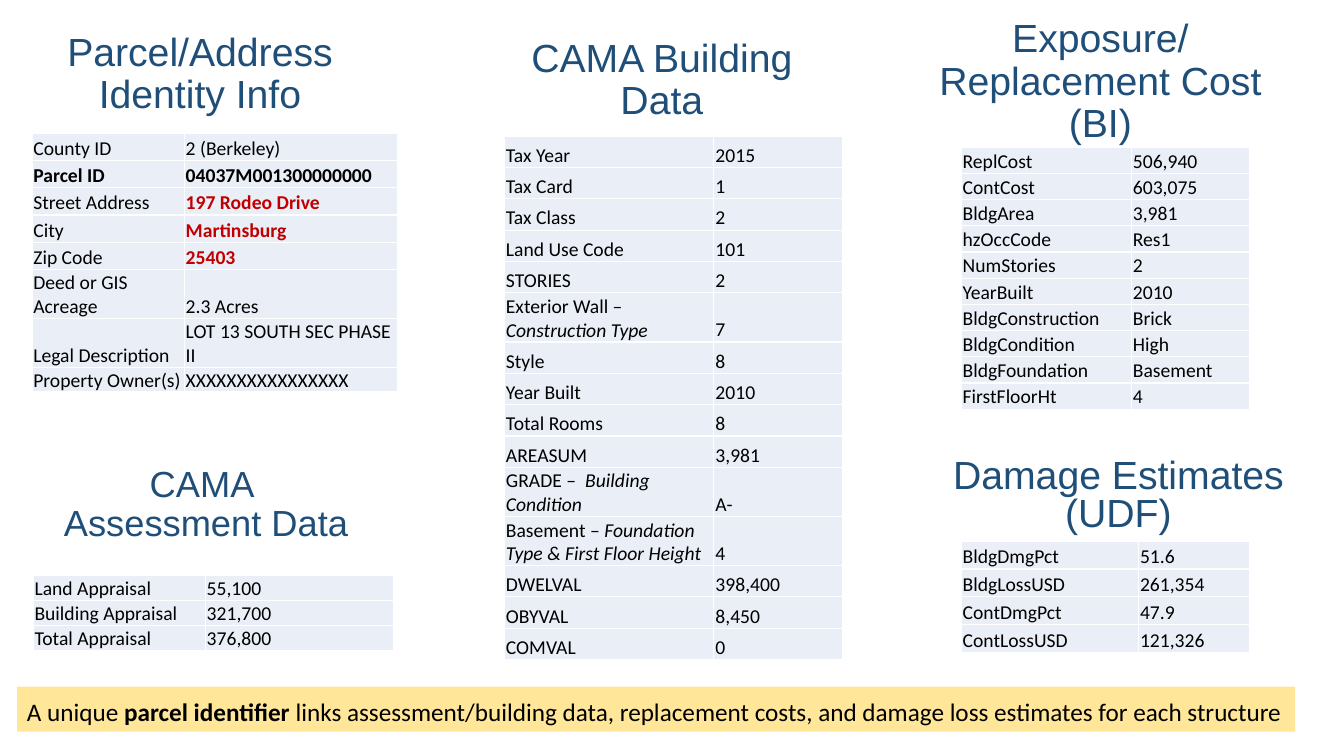
from lxml.etree import SubElement
from pptx import Presentation
from pptx.dml.color import RGBColor
from pptx.enum.shapes import MSO_SHAPE
from pptx.enum.text import MSO_ANCHOR, PP_ALIGN
from pptx.oxml.ns import qn
from pptx.util import Cm, Pt

COLORS = {
    "heading": "1F4E79",
    "text": "000000",
    "address": "C00000",
    "cell": "EAEFF7",
    "border": "FFFFFF",
    "banner": "FFE699",
}
BODY = {"name": "Calibri", "size": Pt(14), "color": "text"}
BOLD = {"bold": True}
ITALIC = {"italic": True}
ADDRESS = {"bold": True, "color": "address"}
TWO_LINES = 1.23


def add_span(para, text, style):
    span = para.add_run()
    span.text = text
    for name, value in style.items():
        if name == "color":
            span.font.color.rgb = RGBColor.from_string(COLORS[value])
        else:
            setattr(span.font, name, value)


def add_data_table(page, left, top, widths, row_height, inset, rows):
    table = page.shapes.add_table(
        len(rows), 2, Cm(left), Cm(top), Cm(sum(widths)), Cm(row_height * len(rows))
    ).table
    table.first_row = table.horz_banding = False
    for column, width in zip(table.columns, widths):
        column.width = Cm(width)
    margins = {
        "margin_left": Cm(inset),
        "margin_right": Cm(inset),
        "margin_top": Cm(inset),
        "margin_bottom": 0,
        "vertical_anchor": MSO_ANCHOR.BOTTOM,
    }
    for table_row, row in zip(table.rows, rows):
        table_row.height = Cm(ROW_HEIGHTS.get(row[0], row_height))
        for cell, text in zip(table_row.cells, row):
            for name, value in margins.items():
                setattr(cell, name, value)
            properties = cell._tc.get_or_add_tcPr()
            for side in ("a:lnL", "a:lnR", "a:lnT", "a:lnB"):
                line = SubElement(properties, qn(side), w=str(Pt(1)))
                fill = SubElement(line, qn("a:solidFill"))
                SubElement(fill, qn("a:srgbClr"), val=COLORS["border"])
            cell.fill.solid()
            cell.fill.fore_color.rgb = RGBColor.from_string(COLORS["cell"])
            para = cell.text_frame.paragraphs[0]
            plain, _, italic = text.partition("|")
            add_span(para, plain, BODY | CELL_STYLES.get(plain, {}))
            if italic:
                add_span(para, italic, BODY | ITALIC)


CELL_STYLES = {
    "Parcel ID": BOLD,
    "04037M001300000000": BOLD,
    "197 Rodeo Drive": ADDRESS,
    "Martinsburg": ADDRESS,
    "25403": ADDRESS,
}
ROW_HEIGHTS = {
    "Deed or GIS Acreage": TWO_LINES,
    "Legal Description": TWO_LINES,
    "Property Owner(s)": 0.62,
    "Exterior Wall – |Construction Type": TWO_LINES,
    "GRADE –  |Building Condition": TWO_LINES,
    "Basement – |Foundation Type & First Floor Height": TWO_LINES,
}

HEADINGS = [
    (["Parcel/Address Identity Info"], (0.25, 0.05, 9.58, 3.68), 28, 0.9, 0.13),
    (["CAMA ", "Assessment Data"], (1.17, 11.23, 8.05, 3.02), 25.9, 0.9, 0.13),
    (["CAMA Building", "Data"], (11.89, 0.2, 9.58, 3.68), 28, 0.9, 0.13),
    (["Exposure/", "Replacement Cost (BI)"], (22.94, 0.74, 9.58, 3.68), 28, 0.9, 1.12),
    (["Damage Estimates (UDF)"], (23.6, 11.43, 9.17, 2.21), 28, 0.8, 0.13),
]

TABLES = [
    (0.81, 3.35, (3.84, 5.38), 0.69, 0.03, [
        ("County ID", "2 (Berkeley)"),
        ("Parcel ID", "04037M001300000000"),
        ("Street Address", "197 Rodeo Drive"),
        ("City", "Martinsburg"),
        ("Zip Code", "25403"),
        ("Deed or GIS Acreage", "2.3 Acres"),
        ("Legal Description", "LOT 13 SOUTH SEC PHASE II"),
        ("Property Owner(s)", "XXXXXXXXXXXXXXXX"),
    ]),
    (0.84, 14.5, (4.34, 4.75), 0.63, 0.03, [
        ("Land Appraisal", "55,100"),
        ("Building Appraisal", "321,700"),
        ("Total Appraisal", "376,800"),
    ]),
    (12.7, 3.43, (5.28, 3.25), 0.79, 0.05, [
        ("Tax Year", "2015"),
        ("Tax Card", "1"),
        ("Tax Class", "2"),
        ("Land Use Code", "101"),
        ("STORIES", "2"),
        ("Exterior Wall – |Construction Type", "7"),
        ("Style", "8"),
        ("Year Built", "2010"),
        ("Total Rooms", "8"),
        ("AREASUM", "3,981"),
        ("GRADE –  |Building Condition", "A-"),
        ("Basement – |Foundation Type & First Floor Height", "4"),
        ("DWELVAL", "398,400"),
        ("OBYVAL", "8,450"),
        ("COMVAL", "0"),
    ]),
    (24.23, 3.71, (4.29, 2.97), 0.66, 0.03, [
        ("ReplCost", "506,940"),
        ("ContCost", "603,075"),
        ("BldgArea", "3,981"),
        ("hzOccCode", "Res1"),
        ("NumStories", "2"),
        ("YearBuilt", "2010"),
        ("BldgConstruction", "Brick"),
        ("BldgCondition", "High"),
        ("BldgFoundation", "Basement"),
        ("FirstFloorHt", "4"),
    ]),
    (24.23, 13.64, (4.47, 2.79), 0.7, 0.03, [
        ("BldgDmgPct", "51.6"),
        ("BldgLossUSD", "261,354"),
        ("ContDmgPct", "47.9"),
        ("ContLossUSD", "121,326"),
    ]),
]

deck = Presentation()
deck.slide_width, deck.slide_height = Cm(33.87), Cm(19.05)
page = deck.slides.add_slide(deck.slide_layouts[6])

for (lines, place, size, spacing, bottom), table in zip(HEADINGS, TABLES):
    box = page.shapes.add_textbox(*map(Cm, place))
    frame = box.text_frame
    frame.word_wrap = True
    frame.vertical_anchor = MSO_ANCHOR.MIDDLE
    frame.margin_bottom = Cm(bottom)
    for index, line in enumerate(lines):
        para = frame.add_paragraph() if index else frame.paragraphs[0]
        para.alignment = PP_ALIGN.CENTER
        para.line_spacing = spacing
        add_span(para, line, {"name": "Arial", "size": Pt(size), "color": "heading"})
    add_data_table(page, *table)

banner = page.shapes.add_shape(
    MSO_SHAPE.RECTANGLE, Cm(0.43), Cm(17.3), Cm(32.21), Cm(1.14)
)
banner.shadow.inherit = False
banner.fill.solid()
banner.fill.fore_color.rgb = RGBColor.from_string(COLORS["banner"])
banner.line.fill.background()
banner.text_frame.word_wrap = True
banner.text_frame.vertical_anchor = MSO_ANCHOR.TOP
para = banner.text_frame.paragraphs[0]
banner_layout = {"alignment": PP_ALIGN.LEFT, "line_spacing": 1.15, "space_after": Pt(10)}
for name, value in banner_layout.items():
    setattr(para, name, value)
for text, style in [
    ("A unique ", {}),
    ("parcel identifier ", BOLD),
    ("links assessment/building data, replacement costs, "
     "and damage loss estimates for each structure", {}),
]:
    add_span(para, text, BODY | {"size": Pt(18)} | style)

deck.save("out.pptx")
